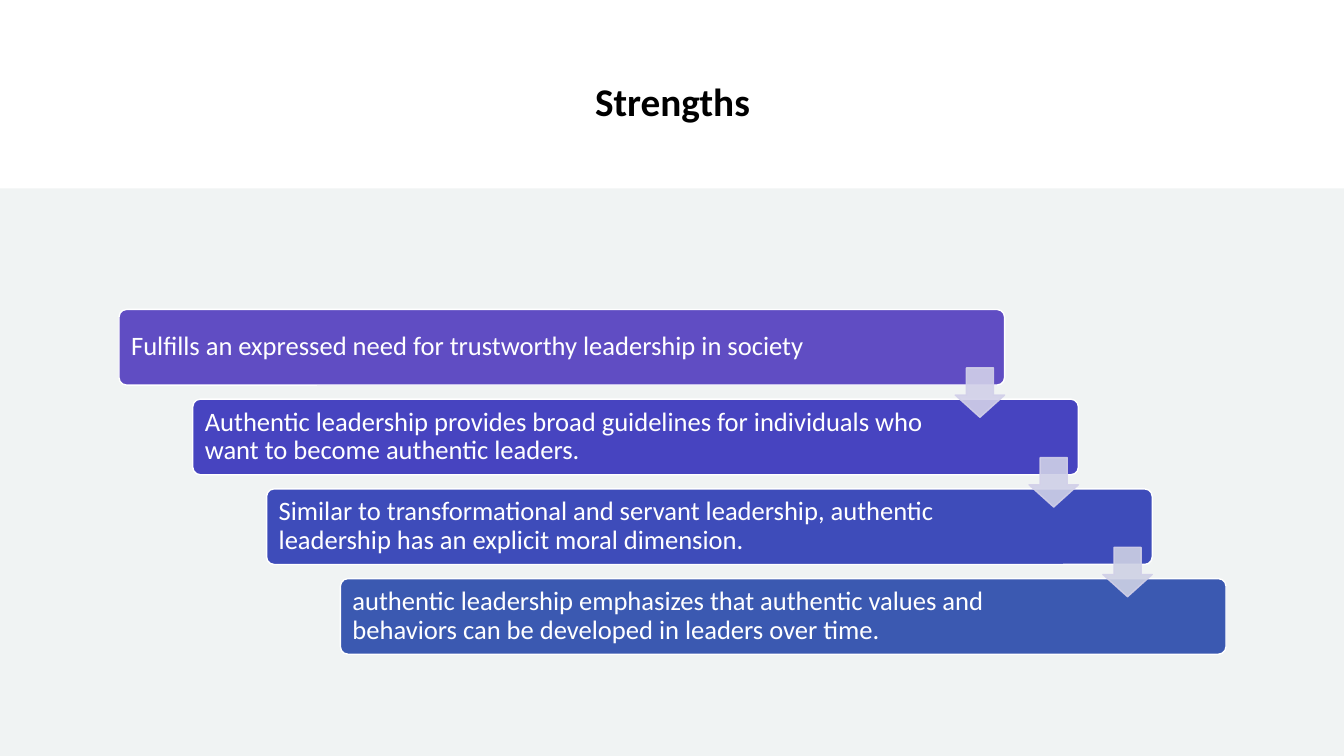
from lxml.etree import SubElement
from pptx import Presentation
from pptx.dml.color import RGBColor
from pptx.enum.shapes import MSO_SHAPE
from pptx.enum.text import MSO_ANCHOR, PP_ALIGN
from pptx.oxml.ns import qn
from pptx.util import Inches, Pt

STRENGTHS = [
    ("Fulfills an expressed need for trustworthy leadership in society", "604DC3"),
    ("Authentic leadership provides broad guidelines for individuals who "
     "want to become authentic leaders.", "4744C0"),
    ("Similar to transformational and servant leadership, authentic "
     "leadership has an explicit moral dimension.", "3E4CBA"),
    ("authentic leadership emphasizes that authentic values and "
     "behaviors can be developed in leaders over time.", "3B59B1"),
]
ARROW_FILLS = ["D2D0E9", "CFD0E7", "CED1E4"]
ARROW_LINE = "D2D0E9"


def paint(fill, color, alpha=None):
    fill.solid()
    fill.fore_color.rgb = RGBColor.from_string(color)
    if alpha is not None:
        clr = fill._xPr.find(qn("a:solidFill"))[0]
        SubElement(clr, qn("a:alpha"), val=str(alpha * 1000))


def write(tf, text, size, color, bold=False, align=PP_ALIGN.LEFT, spacing=0.9):
    tf.word_wrap = True
    tf.vertical_anchor = MSO_ANCHOR.MIDDLE
    p = tf.paragraphs[0]
    p.alignment = align
    p.line_spacing = spacing
    p.space_before = Pt(0)
    r = p.add_run()
    r.text = text
    r.font.name = "Calibri"
    r.font.size = Pt(size)
    r.font.bold = bold
    paint(r.font.fill, color)


def add_box(s, kind, x, y, w, h, fill, line=None, alpha=None, adj=()):
    sp = s.shapes.add_shape(kind, Inches(x), Inches(y), Inches(w), Inches(h))
    sp.shadow.inherit = False
    paint(sp.fill, fill, alpha)
    if line:
        sp.line.width = Pt(1)
        paint(sp.line.fill, line, alpha)
    else:
        sp.line.fill.background()
    for i, value in enumerate(adj):
        sp.adjustments[i] = value
    return sp


def add_title(s, text, x, y, w, h):
    sp = s.shapes.title
    sp.left, sp.top, sp.width, sp.height = (Inches(v) for v in (x, y, w, h))
    write(sp.text_frame, text, 28, "000000", bold=True,
          align=PP_ALIGN.CENTER, spacing=1.1)


def add_staircase(s, x, y, w, h):
    bar_w, bar_h, arrow = 0.8 * w, 0.75, 0.49
    steps = len(STRENGTHS) - 1
    dx, dy = (w - bar_w) / steps, (h - bar_h) / steps
    for i, (text, color) in enumerate(STRENGTHS):
        bar = add_box(s, MSO_SHAPE.ROUNDED_RECTANGLE, x + i * dx, y + i * dy,
                      bar_w, bar_h, color, line="FFFFFF", adj=[0.1])
        tf = bar.text_frame
        tf.margin_left, tf.margin_right = Inches(0.1), Inches(1.32)
        tf.margin_top = tf.margin_bottom = Inches(0.08)
        write(tf, text, 19, "FFFFFF")
    for i, color in enumerate(ARROW_FILLS):
        add_box(s, MSO_SHAPE.DOWN_ARROW, x + i * dx + bar_w - arrow,
                y + i * dy + 0.58, arrow, arrow, color, line=ARROW_LINE,
                alpha=90, adj=[0.55, 0.45])


def main():
    prs = Presentation()
    prs.slide_width, prs.slide_height = Inches(13.33), Inches(7.5)
    s = prs.slides.add_slide(prs.slide_layouts[5])
    paint(s.background.fill, "FFFFFF")
    add_title(s, "Strengths", 1.18, 0.49, 10.98, 0.97)
    add_box(s, MSO_SHAPE.RECTANGLE, 0, 1.87, 13.33, 5.63, "F0F3F3")
    add_staircase(s, 1.18, 3.07, 10.98, 3.42)
    prs.save("out.pptx")


if __name__ == "__main__":
    main()
